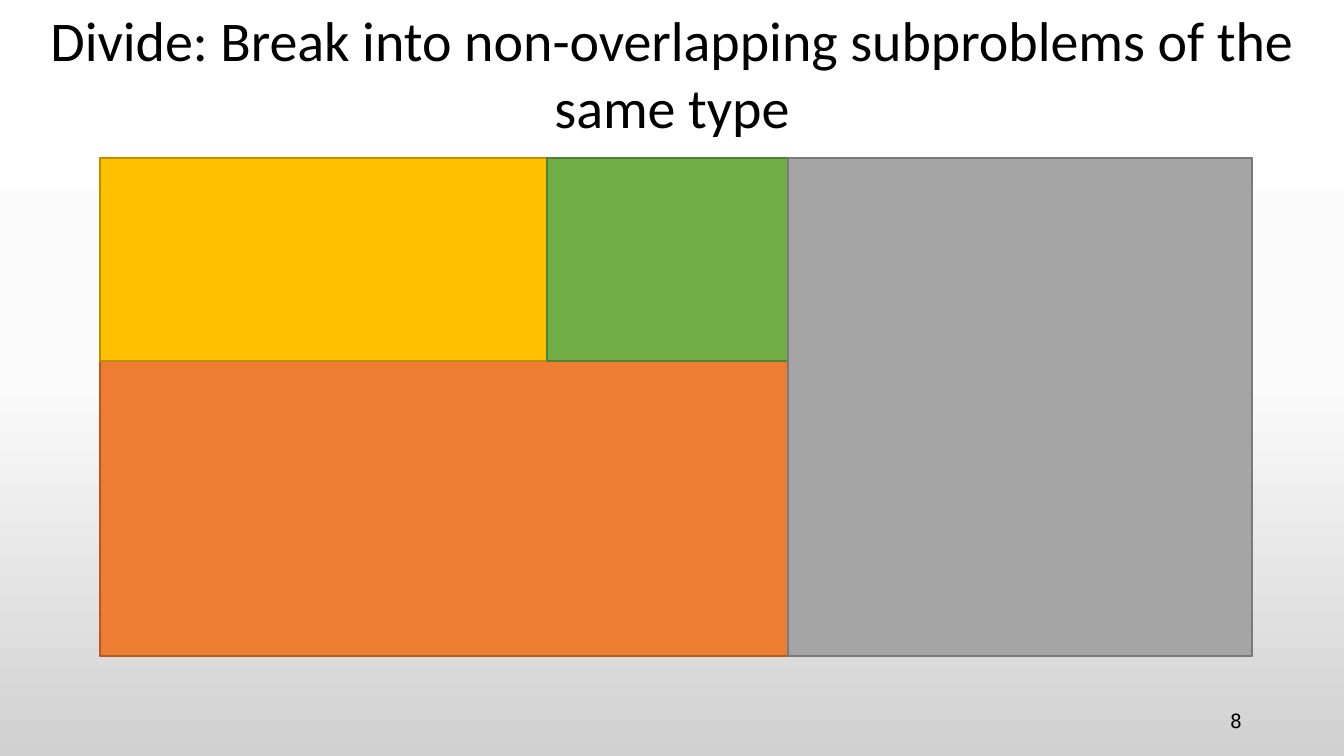
from copy import deepcopy
from dataclasses import dataclass

from pptx import Presentation
from pptx.dml.color import RGBColor as Rgb
from pptx.enum.shapes import MSO_SHAPE as Shape
from pptx.enum.text import MSO_ANCHOR as Anchor, MSO_AUTO_SIZE as Fit, PP_ALIGN as Align
from pptx.oxml.ns import qn
from pptx.util import Emu, Pt


@dataclass(frozen=True)
class Theme:
    ink: str = "000000"
    blue: tuple = ("5B9BD5", "43739E")
    orange: tuple = ("ED7D31", "AF5C24")
    gold: tuple = ("FFC000", "BD8E00")
    green: tuple = ("70AD47", "538035")
    gray: tuple = ("A5A5A5", "7A7A7A")
    back: tuple = ((0, "FFFFFF"), (0.5, "FBFBFB"), (1, "D1D1D1"))
    sans: str = "Calibri"
    mono: str = "DejaVu Sans Mono"
    head: int = 40
    foot: int = 14
    edge: int = 1


THEME = Theme()
WIDE, HIGH = 1344, 756
LEFT, SPLIT, MID, RIGHT = 100, 547, 788, 1252
TOP, HALF, BASE = 158, 361, 656


def px(num):
    return Emu(round(num * 914400 / 100.8))


def shade(slide):
    fill = slide.background.fill
    fill.gradient()
    fill.gradient_angle = 270
    first = slide.element.find(".//" + qn("a:gs"))
    first.addnext(deepcopy(first))
    for stop, (pos, color) in zip(fill.gradient_stops, THEME.back):
        stop.position = pos
        stop.color.rgb = Rgb.from_string(color)


def write(frame, text, face, size, align, anchor):
    frame.word_wrap = True
    frame.vertical_anchor = anchor
    frame.text = text
    para = frame.paragraphs[0]
    para.alignment = align
    para.font.name = face
    para.font.size = Pt(size)
    para.font.color.rgb = Rgb.from_string(THEME.ink)


def title(slide, text):
    shape = slide.shapes.title
    shape.left, shape.top = px(0), px(0)
    shape.width, shape.height = px(WIDE), px(146)
    write(shape.text_frame, text, THEME.sans, THEME.head, Align.CENTER, Anchor.TOP)
    shape.text_frame.auto_size = Fit.SHAPE_TO_FIT_TEXT


def number(slide, text):
    box = slide.shapes.add_textbox(px(950), px(701), px(302), px(40))
    write(box.text_frame, text, THEME.mono, THEME.foot, Align.RIGHT, Anchor.MIDDLE)


def block(slide, left, top, right, base, colors):
    fill, line = colors
    rect = slide.shapes.add_shape(
        Shape.RECTANGLE, px(left), px(top), px(right - left), px(base - top)
    )
    rect.shadow.inherit = False
    rect.fill.solid()
    rect.fill.fore_color.rgb = Rgb.from_string(fill)
    rect.line.color.rgb = Rgb.from_string(line)
    rect.line.width = Pt(THEME.edge)


def main():
    deck = Presentation()
    deck.slide_width, deck.slide_height = px(WIDE), px(HIGH)
    slide = deck.slides.add_slide(deck.slide_layouts[5])
    shade(slide)
    title(slide, "Divide: Break into non-overlapping subproblems of the same type")
    number(slide, "8")
    for part in (
        (LEFT, TOP, RIGHT, BASE, THEME.blue),
        (LEFT, HALF, MID, BASE, THEME.orange),
        (LEFT, TOP, SPLIT, HALF, THEME.gold),
        (SPLIT, TOP, MID, HALF, THEME.green),
        (MID, TOP, RIGHT, BASE, THEME.gray),
    ):
        block(slide, *part)
    deck.save("out.pptx")


if __name__ == "__main__":
    main()
